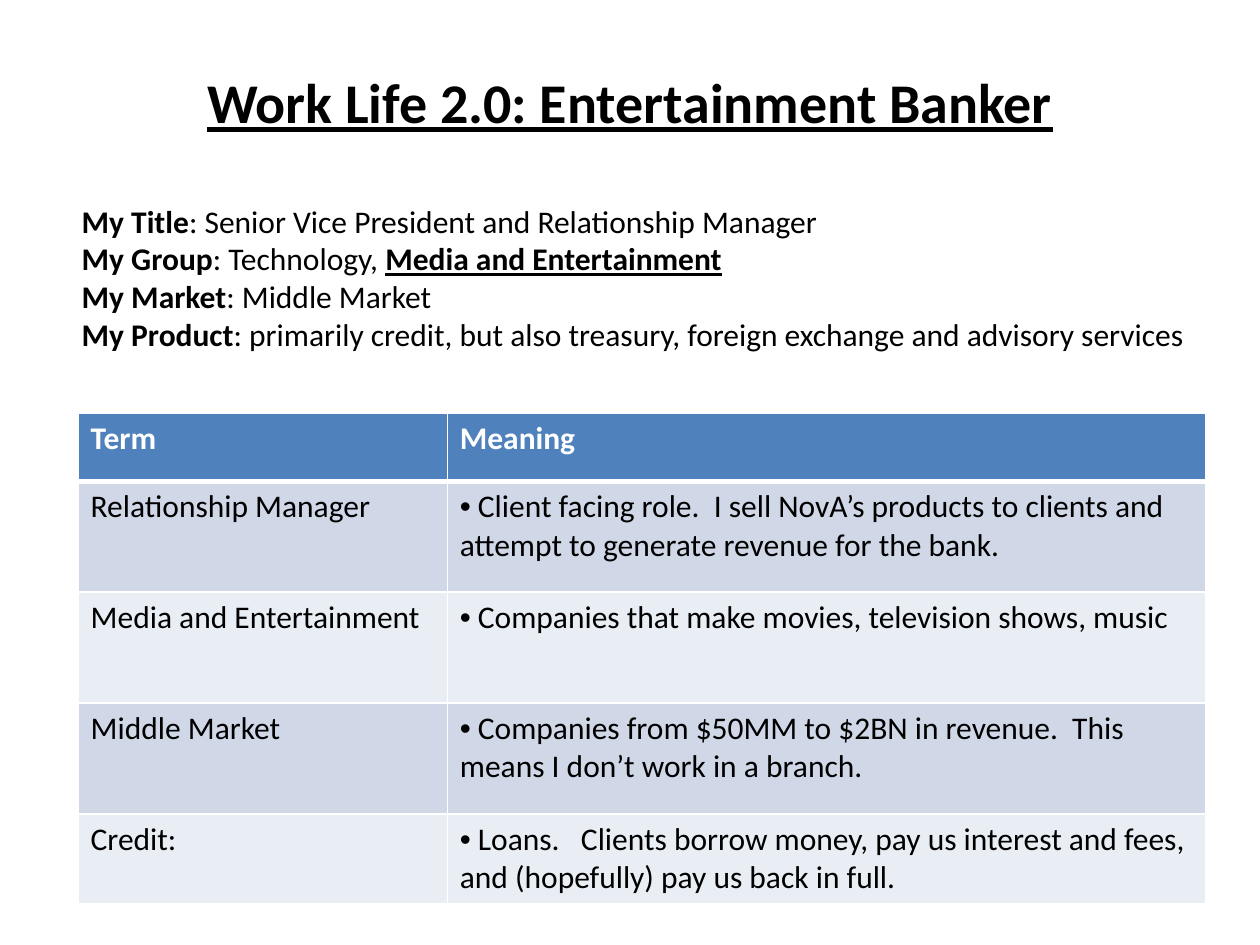
from lxml import etree
from pptx import Presentation
from pptx.dml.color import RGBColor
from pptx.enum import text
from pptx.oxml import ns
from pptx.util import Inches, Pt

FONT = "Calibri"
BLACK = RGBColor(0x00, 0x00, 0x00)
WHITE = RGBColor(0xFF, 0xFF, 0xFF)
HEADER_BLUE = RGBColor(0x4F, 0x81, 0xBD)
BANDS = [RGBColor(0xD0, 0xD8, 0xE8), RGBColor(0xE9, 0xED, 0xF4)]

TITLE = "Work Life 2.0: Entertainment Banker"

# Each line is a label, its plain text and an underlined ending
PROFILE = [
    ("My Title", ": Senior Vice President and Relationship Manager", ""),
    ("My Group", ": Technology, ", "Media and Entertainment"),
    ("My Market", ": Middle Market", ""),
    ("My Product", ": primarily credit, but also treasury, foreign exchange "
                   "and advisory services", ""),
]

TERMS = [
    ("Term", "Meaning"),
    ("Relationship Manager", " Client facing role.  I sell NovA’s products to "
                             "clients and attempt to generate revenue for the bank."),
    ("Media and Entertainment", " Companies that make movies, television shows, music"),
    ("Middle Market", " Companies from $50MM to $2BN in revenue.  "
                      "This means I don’t work in a branch."),
    ("Credit:", " Loans.   Clients borrow money, pay us interest and fees, "
                "and (hopefully) pay us back in full."),
]
COLUMN_WIDTHS = [2.93, 6.02]
ROW_HEIGHTS = [0.54, 0.88, 0.88, 0.88, 0.70]


def set_font(font, size, color=BLACK, bold=False):
    font.name, font.size, font.bold = FONT, Pt(size), bold
    font.color.rgb = color


def place(sp, box):
    sp.left, sp.top, sp.width, sp.height = (Inches(v) for v in box)


def add_title(slide, box):
    sp = slide.shapes.title
    place(sp, box)
    tf = sp.text_frame
    tf.text = TITLE
    tf.vertical_anchor = text.MSO_ANCHOR.MIDDLE
    p = tf.paragraphs[0]
    p.alignment = text.PP_ALIGN.CENTER
    set_font(p.font, 32, bold=True)
    p.font.underline = True


def add_profile(slide, box):
    tf = slide.shapes.add_textbox(*(Inches(v) for v in box)).text_frame
    tf.word_wrap = True
    for i, (label, plain, ending) in enumerate(PROFILE):
        p = tf.paragraphs[0] if i == 0 else tf.add_paragraph()
        set_font(p.font, 18)
        r = p.add_run()
        r.text, r.font.bold = label, True
        p.add_run().text = plain
        if ending:
            r = p.add_run()
            r.text, r.font.bold, r.font.underline = ending, True, True


def set_borders(cell, top, bottom):
    tc_pr = cell._tc.get_or_add_tcPr()
    for side, width in (("L", 1), ("R", 1), ("T", top), ("B", bottom)):
        ln = etree.SubElement(tc_pr, ns.qn(f"a:ln{side}"), w=str(Pt(width)))
        fill = etree.SubElement(ln, ns.qn("a:solidFill"))
        etree.SubElement(fill, ns.qn("a:srgbClr"), val=str(WHITE))


def add_bullet(p):
    p_pr = p._p.get_or_add_pPr()
    p_pr.set("marL", "0")
    p_pr.set("indent", "0")
    font = etree.Element(ns.qn("a:buFont"), typeface="Arial")
    char = etree.Element(ns.qn("a:buChar"), char="•")
    p_pr.insert(0, font)
    p_pr.insert(1, char)


def add_terms(slide, box):
    table = slide.shapes.add_table(
        len(TERMS), len(COLUMN_WIDTHS), *(Inches(v) for v in box)).table
    for column, width in zip(table.columns, COLUMN_WIDTHS):
        column.width = Inches(width)
    for i, (row, height) in enumerate(zip(table.rows, ROW_HEIGHTS)):
        row.height = Inches(height)
        header = i == 0
        for j, cell in enumerate(row.cells):
            # Thick rule under the header
            set_borders(cell, top=3 if i == 1 else 1, bottom=3 if header else 1)
            cell.fill.solid()
            cell.fill.fore_color.rgb = HEADER_BLUE if header else BANDS[(i - 1) % 2]
            cell.text = TERMS[i][j]
            p = cell.text_frame.paragraphs[0]
            if j == 1 and not header:
                add_bullet(p)
            set_font(p.font, 18, WHITE if header else BLACK, bold=header)


def main():
    prs = Presentation()
    prs.slide_width, prs.slide_height = Inches(10), Inches(7.5)
    slide = prs.slides.add_slide(prs.slide_layouts.get_by_name("Title Only"))
    add_title(slide, (0.5, 0.18, 9, 1.25))
    add_terms(slide, (0.62, 3.28, sum(COLUMN_WIDTHS), sum(ROW_HEIGHTS)))
    add_profile(slide, (0.55, 1.55, 8.95, 1.62))
    prs.save("out.pptx")


if __name__ == "__main__":
    main()
